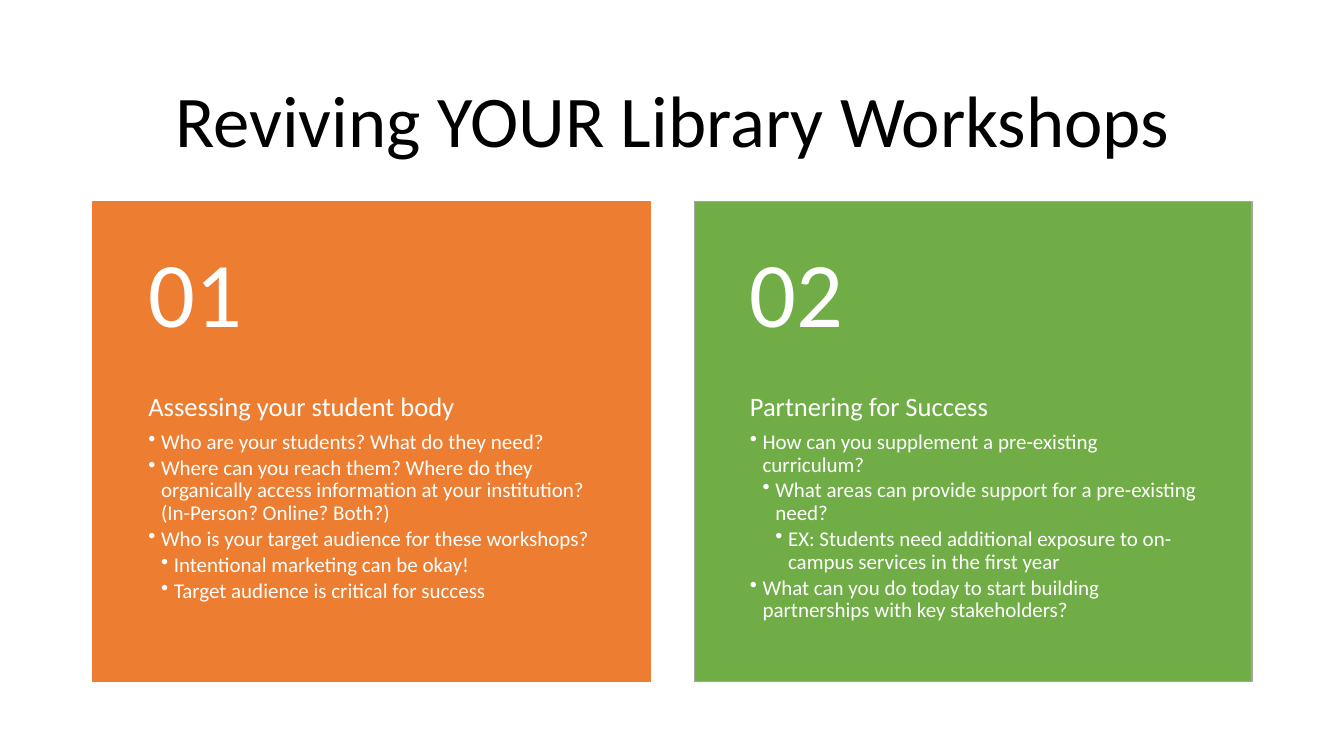
from dataclasses import dataclass

from lxml.etree import SubElement
from pptx import Presentation
from pptx.dml.color import RGBColor
from pptx.enum.shapes import MSO_SHAPE as Shape
from pptx.enum.text import MSO_ANCHOR as Anchor, PP_ALIGN as Align
from pptx.oxml.ns import qn
from pptx.util import Cm, Pt

# Content
TITLE = "Reviving YOUR Library Workshops"
CARDS = [
    {
        "number": "01",
        "heading": "Assessing your student body",
        "fill": "ED7D31",
        "line": "ED7D31",
        "bullets": [
            (1, "Who are your students? What do they need?"),
            (1, "Where can you reach them? Where do they organically access "
                "information at your institution? (In-Person? Online? Both?)"),
            (1, "Who is your target audience for these workshops?"),
            (2, "Intentional marketing can be okay!"),
            (2, "Target audience is critical for success"),
        ],
    },
    {
        "number": "02",
        "heading": "Partnering for Success",
        "fill": "70AD47",
        "line": "A5A5A5",
        "bullets": [
            (1, "How can you supplement a pre-existing curriculum?"),
            (2, "What areas can provide support for a pre-existing need?"),
            (3, "EX: Students need additional exposure to on-campus services "
                "in the first year"),
            (1, "What can you do today to start building partnerships with "
                "key stakeholders?"),
        ],
    },
]


@dataclass(frozen=True)
class Theme:
    font: str = "Calibri"
    dark: str = "000000"
    light: str = "FFFFFF"
    title: int = 52
    number: int = 66
    heading: int = 19
    bullet: int = 15
    line_spacing: float = 0.9
    heading_gap: float = 0.35  # share of the type size
    bullet_gap: float = 0.15


THEME = Theme()

# Layout
SLIDE_WIDTH, SLIDE_HEIGHT = Cm(33.87), Cm(19.05)
MARGIN, CONTENT_WIDTH = Cm(2.34), Cm(29.21)
TITLE_TOP, TITLE_HEIGHT = Cm(1.55), Cm(3.15)
CARD_TOP, CARD_WIDTH, CARD_HEIGHT = Cm(5.08), Cm(14.05), Cm(12.09)
CARD_STEP = CONTENT_WIDTH - CARD_WIDTH
NUMBER_HEIGHT = Cm(4.83)
SIDE_INSET, NUMBER_INSET, BODY_INSET = Cm(1.4), Cm(0.46), Cm(0.91)
BULLET_INDENT = Cm(0.32)


def add_text_frame(slide, box, insets, anchor):
    text_frame = slide.shapes.add_textbox(*box).text_frame
    text_frame.word_wrap = True
    text_frame.vertical_anchor = anchor
    (text_frame.margin_left, text_frame.margin_top,
     text_frame.margin_right, text_frame.margin_bottom) = insets
    return text_frame


def write(paragraph, text, size, color, gap=0.0, level=0):
    paragraph.text = text
    paragraph.line_spacing = THEME.line_spacing
    paragraph.space_after = Pt(size * gap)
    if level:
        paragraph.level = level
        properties = paragraph._p.get_or_add_pPr()
        properties.set("marL", str(level * BULLET_INDENT))
        properties.set("indent", str(-BULLET_INDENT))
        SubElement(properties, qn("a:buChar")).set("char", "•")
    for run in paragraph.runs:
        run.font.name = THEME.font
        run.font.size = Pt(size)
        run.font.color.rgb = RGBColor.from_string(color)


def add_card(slide, left, card):
    # Panel
    panel = slide.shapes.add_shape(
        Shape.RECTANGLE, left, CARD_TOP, CARD_WIDTH, CARD_HEIGHT)
    panel.shadow.inherit = False
    panel.fill.solid()
    panel.fill.fore_color.rgb = RGBColor.from_string(card["fill"])
    panel.line.color.rgb = RGBColor.from_string(card["line"])
    panel.line.width = Pt(1)

    # Number
    number = add_text_frame(
        slide, (left, CARD_TOP, CARD_WIDTH, NUMBER_HEIGHT),
        (SIDE_INSET, NUMBER_INSET, SIDE_INSET, NUMBER_INSET), Anchor.MIDDLE)
    write(number.paragraphs[0], card["number"], THEME.number, THEME.light,
          THEME.heading_gap)

    # Heading and bullets
    body = add_text_frame(
        slide, (left, CARD_TOP + NUMBER_HEIGHT, CARD_WIDTH,
                CARD_HEIGHT - NUMBER_HEIGHT),
        (SIDE_INSET, 0, SIDE_INSET, BODY_INSET), Anchor.TOP)
    write(body.paragraphs[0], card["heading"], THEME.heading, THEME.light,
          THEME.heading_gap)
    for level, text in card["bullets"]:
        write(body.add_paragraph(), text, THEME.bullet, THEME.light,
              THEME.bullet_gap, level)


def main():
    presentation = Presentation()
    presentation.slide_width = SLIDE_WIDTH
    presentation.slide_height = SLIDE_HEIGHT
    slide = presentation.slides.add_slide(presentation.slide_layouts[6])

    # Title
    title = add_text_frame(
        slide, (MARGIN, TITLE_TOP, CONTENT_WIDTH, TITLE_HEIGHT),
        (Cm(0.25), Cm(0.13), Cm(0.25), Cm(0.13)), Anchor.MIDDLE)
    write(title.paragraphs[0], TITLE, THEME.title, THEME.dark)
    title.paragraphs[0].alignment = Align.CENTER

    # Cards
    for index, card in enumerate(CARDS):
        add_card(slide, MARGIN + index * CARD_STEP, card)

    presentation.save("out.pptx")


if __name__ == "__main__":
    main()
